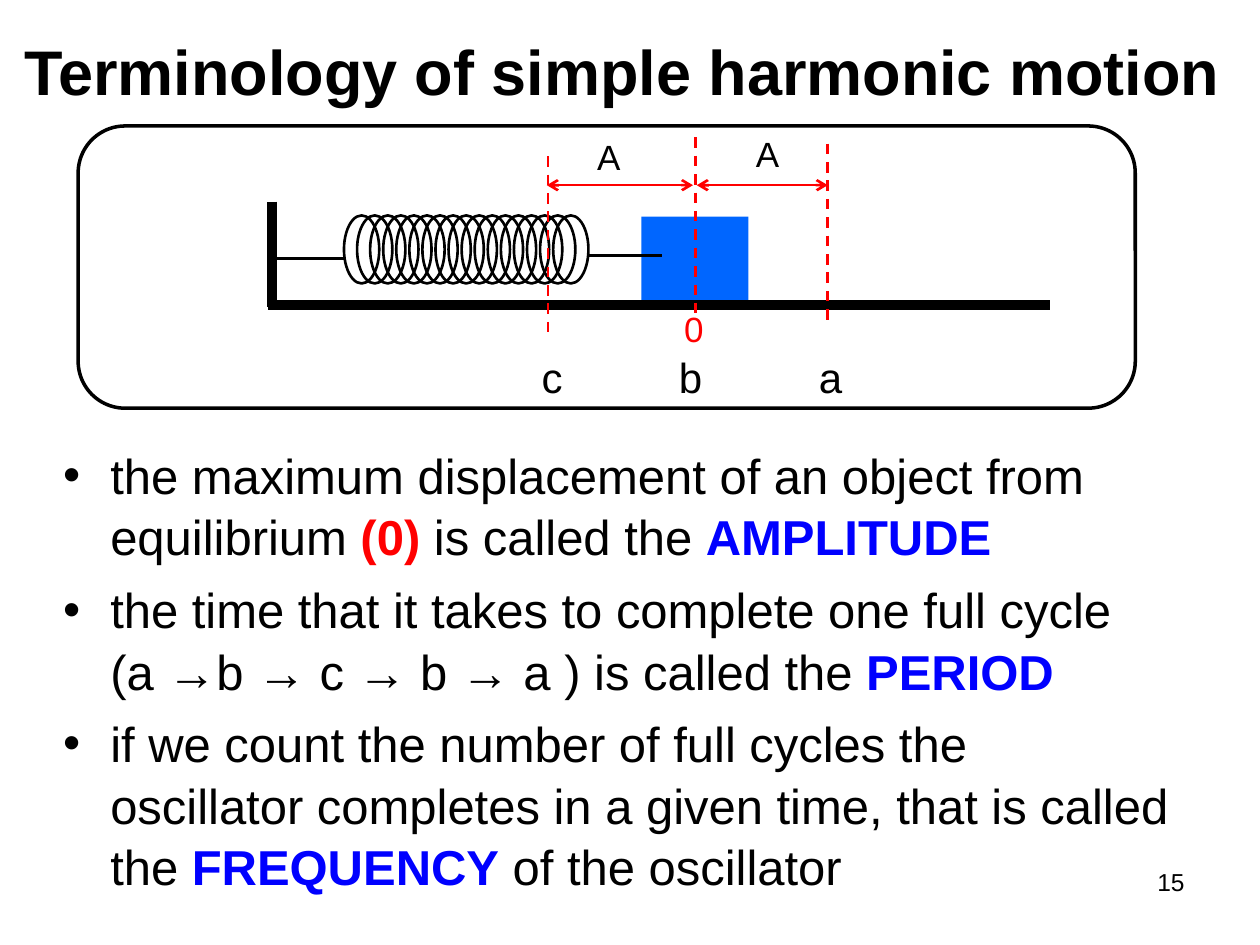
from lxml import etree
from pptx import Presentation, util as u
from pptx.dml.color import RGBColor
from pptx.enum import dml, shapes, text
from pptx.oxml.ns import qn

COLORS = {"ink": "000000", "paper": "FFFFFF", "red": "FF0000",
          "term": "0000FF", "block": "0066FF"}
COLS, ROWS = 100, 75  # square grid cells over the slide

deck = Presentation()
deck.slide_width, deck.slide_height = u.Inches(10), u.Inches(7.5)
slide = deck.slides.add_slide(deck.slide_layouts[1])
cell = deck.slide_width / COLS


def grid(*cells):
    return [u.Emu(round(n * cell)) for n in cells]


def style_font(font, size, color="ink", bold=False):
    look = {"name": "Arial", "size": u.Pt(size), "bold": bold}
    for key, value in look.items():
        setattr(font, key, value)
    font.color.rgb = RGBColor.from_string(COLORS[color])


# Title
title = slide.shapes.title
title.left, title.top, title.width, title.height = grid(-0.6, 1, COLS, 9.1)
title.fill.solid()
title.fill.fore_color.rgb = RGBColor.from_string(COLORS["paper"])
title.text_frame.text = "Terminology of simple harmonic motion"
title.text_frame.auto_size = text.MSO_AUTO_SIZE.NONE
title.text_frame.vertical_anchor = text.MSO_ANCHOR.MIDDLE
heading = title.text_frame.paragraphs[0]
heading.alignment = text.PP_ALIGN.CENTER
style_font(heading.runs[0].font, 36, bold=True)

# Definitions: runs of (wording, colour, bold); None is a line break
definitions = [
    [("the maximum displacement of an object from equilibrium ", "ink", False),
     ("(0) ", "red", True), ("is called the ", "ink", False),
     ("AMPLITUDE", "term", True)],
    [("the time that it takes to complete one full cycle ", "ink", False), None,
     ("(a →b → c → b → a ) is called the ", "ink", False),
     ("PERIOD", "term", True)],
    [("if we count the number of full cycles the oscillator completes in a "
      "given time, that is called the ", "ink", False),
     ("FREQUENCY", "term", True), (" of the oscillator", "ink", False)],
]
body = slide.placeholders[1]
body.left, body.top, body.width, body.height = grid(4, 34.6, 90, 36)
body.text_frame.auto_size = text.MSO_AUTO_SIZE.NONE
for i, definition in enumerate(definitions):
    item = body.text_frame.paragraphs[0] if i == 0 else body.text_frame.add_paragraph()
    item.line_spacing = 1.05
    for part in definition:
        if part is None:
            item.add_line_break()
            continue
        wording, color, bold = part
        run = item.add_run()
        run.text = wording
        style_font(run.font, 28, color, bold)

# Spring coils, block and frame: preset, place, fill, line width
oscillator = slide.shapes.add_group_shape().shapes
COILS, FIRST_COIL, LAST_COIL = 17, 27.3, 43.9
pitch = (LAST_COIL - FIRST_COIL) / (COILS - 1)
preset = shapes.MSO_SHAPE
solids = [(oscillator, preset.OVAL, (FIRST_COIL + n * pitch, 17.1, 2.8, 5.4), None, 1.5)
          for n in range(COILS)]
solids += [(oscillator, preset.RECTANGLE, (50.9, 17.2, 8.5, 7), "block", None),
           (slide.shapes, preset.ROUNDED_RECTANGLE, (6.2, 10, 83.9, 22.4), None, 2)]
for parent, kind, place, fill, width in solids:
    solid = parent.add_shape(kind, *grid(*place))
    solid.shadow.inherit = False
    if fill:
        solid.fill.solid()
        solid.fill.fore_color.rgb = RGBColor.from_string(COLORS[fill])
        solid.line.fill.background()
    else:
        solid.fill.background()
        solid.line.color.rgb = RGBColor.from_string(COLORS["ink"])
        solid.line.width = u.Pt(width)

# Lines: from and to, colour, width, dashed, arrows at both ends
lines = [
    ((27.3, 20.5, 21.3, 20.5), "ink", 1.5, False, False),  # spring to wall
    ((46.7, 20.3, 52.5, 20.3), "ink", 1.5, False, False),  # spring to block
    ((21.3, 24.2, 83.3, 24.2), "ink", 6, False, False),    # floor
    ((21.6, 16, 21.6, 24.4), "ink", 6, False, False),      # wall
    ((55.3, 14.7, 65.7, 14.7), "red", 1.5, False, True),   # amplitude b to a
    ((55, 14.7, 43.4, 14.7), "red", 1.5, False, True),     # amplitude b to c
]
lines += [((x, top, x, top + 14), "red", 1.5, True, False)
          for x, top in [(55.2, 10.9), (65.7, 11.4), (43.5, 12.4)]]  # positions
for ends, color, width, dashed, arrows in lines:
    stroke = oscillator.add_connector(shapes.MSO_CONNECTOR.STRAIGHT, *grid(*ends))
    stroke.line.color.rgb = RGBColor.from_string(COLORS[color])
    stroke.line.width = u.Pt(width)
    if dashed:
        stroke.line.dash_style = dml.MSO_LINE.DASH
    if arrows:
        for end in ("a:headEnd", "a:tailEnd"):
            etree.SubElement(stroke.line._get_or_add_ln(), qn(end), type="arrow")
    etree.SubElement(stroke._element.spPr, qn("a:effectLst"))

# Labels: parent, place, wording, size, colour, inset, alignment, tab stops
left, right = text.PP_ALIGN.LEFT, text.PP_ALIGN.RIGHT
labels = [
    (oscillator, (59, 10, 3.9, 4.3), "A", 20, "ink", 1, left, ()),
    (oscillator, (46.4, 10.3, 3.9, 4.3), "A", 20, "ink", 1, left, ()),
    (oscillator, (54.3, 24.4, 2.8, 3.3), "0", 20, "red", 0, left, ()),
    (slide.shapes, (42, 27.4, 28.8, 5.1), "c\tb\ta", 24, "ink", 1, left, (10.9, 22)),
    (slide.shapes, (71.7, 68.3, 23.3, 5.2), "15", 14, "ink", 1, right, ()),
]
for parent, place, wording, size, color, inset, align, tabs in labels:
    label = parent.add_textbox(*grid(*place)).text_frame
    margins = {"margin_left": inset, "margin_right": inset,
               "margin_top": inset / 2, "margin_bottom": inset / 2}
    for side, cells in margins.items():
        setattr(label, side, grid(cells)[0])
    label.word_wrap = True
    label.text = wording
    line = label.paragraphs[0]
    line.alignment = align
    style_font(line.runs[0].font, size, color)
    if tabs:
        stops = etree.SubElement(line._p.get_or_add_pPr(), qn("a:tabLst"))
        for stop in grid(*tabs):
            etree.SubElement(stops, qn("a:tab"), pos=str(int(stop)), algn="l")

deck.save("out.pptx")
